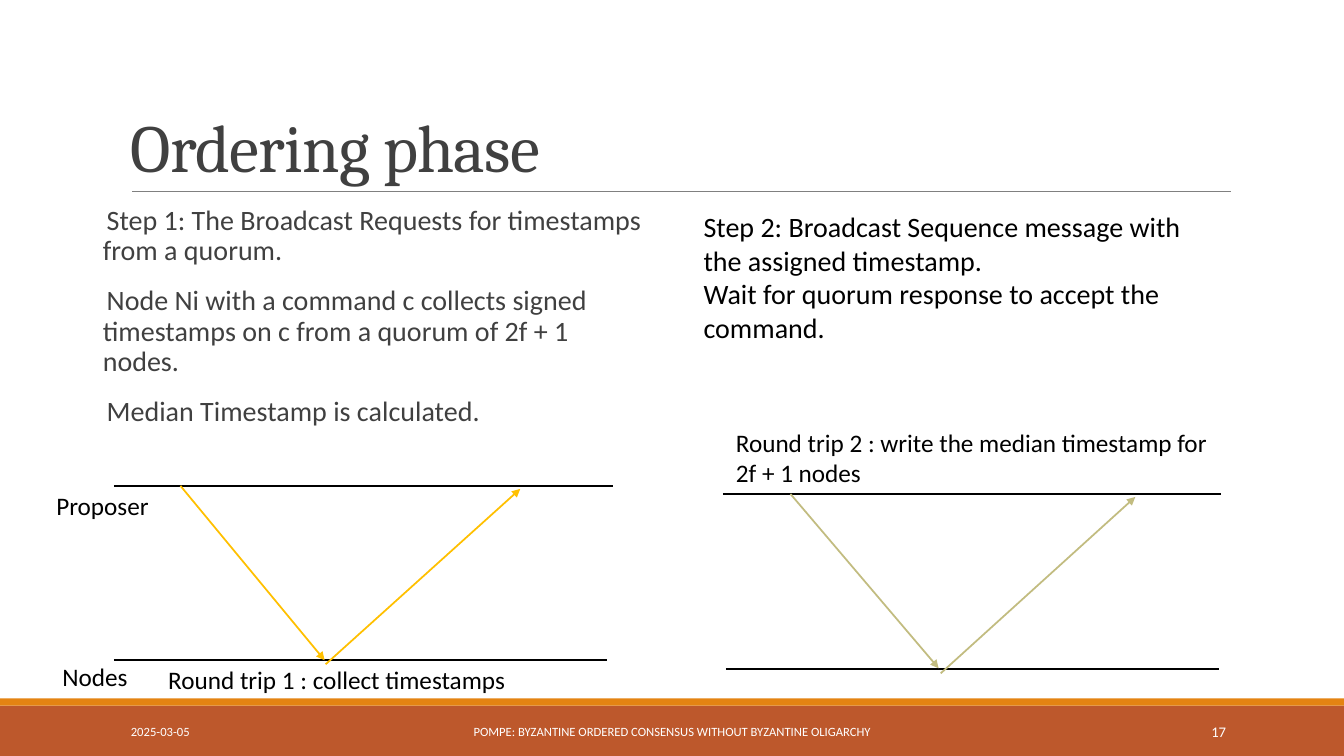
from lxml import etree
from pptx import Presentation
from pptx import util as u
from pptx.dml.color import RGBColor
from pptx.enum import dml, shapes, text
from pptx.oxml.ns import qn

HUES = {"rust": "BD582C", "amber": "E48312", "rule": "808080", "ink": "404040",
        "black": "000000", "white": "FFFFFF", "gold": "FFC000", "sand": "C2BC80"}

BARS = [(7, 0.5, "rust"), (6.93, 0.07, "amber")]

TITLE = {"size": 48, "font": "Cambria", "hue": "ink", "anchor": "BOTTOM", "lead": 0.85, "track": -50}
BODY = {"size": 20, "hue": "ink", "lead": 0.9, "before": 12, "after": 2, "side": 0, "bullet": True}
STEP = {"size": 20, "grow": True}
LABEL = {"size": 18, "grow": True}
FOOT = {"size": 9, "hue": "white", "anchor": "MIDDLE"}

TEXTS = [
    ((1.2, 0.31, 11, 1.59), TITLE, ["Ordering phase"]),
    ((0.92, 2, 5.44, 4.76), BODY, [
        "Step 1: The Broadcast Requests for timestamps from a quorum.",
        "Node Ni with a command c collects signed timestamps on c from a quorum of 2f + 1 nodes.",
        "Median Timestamp is calculated."]),
    ((6.88, 2.03, 5.23, 1.82), STEP, [
        "Step 2: Broadcast Sequence message with the assigned timestamp.",
        "Wait for quorum response to accept the command."]),
    ((7.2, 4.19, 4.89, 0.71), LABEL, ["Round trip 2 : write the median timestamp for 2f + 1 nodes"]),
    ((1.57, 6.54, 4.89, 0.4), LABEL, ["Round trip 1 : collect timestamps"]),
    ((0.52, 6.51, 1.52, 0.4), LABEL, ["Nodes"]),
    ((0.46, 4.82, 1.52, 0.4), LABEL, ["Proposer"]),
    ((1.2, 7.06, 2.7, 0.4), FOOT, ["2025-03-05"]),
    ((4.03, 7.06, 5.27, 0.4), {**FOOT, "align": "CENTER"},
     ["POMPE: BYZANTINE ORDERED CONSENSUS WITHOUT BYZANTINE OLIGARCHY"]),
    ((10.83, 7.06, 1.43, 0.4), {**FOOT, "size": 10.5, "align": "RIGHT"}, ["17"]),
]

RULE = (1.31, 1.9, 12.21, 1.9)
TRIPS = [
    {"hue": "gold", "rails": [(1.13, 4.82, 6.08, 4.82), (1.13, 6.55, 6.02, 6.55)],
     "arrows": [(1.79, 4.82, 3.22, 6.55), (3.23, 6.59, 5.16, 4.85)]},
    {"hue": "sand", "rails": [(7.17, 4.9, 12.11, 4.9), (7.2, 6.64, 12.09, 6.64)],
     "arrows": [(7.84, 4.9, 9.31, 6.63), (9.33, 6.68, 11.26, 4.93)]},
]


def color(name):
    return RGBColor.from_string(HUES[name])


def apply(item, values):
    for key, value in values.items():
        setattr(item, key, value)


def add_bar(slide, top, tall, hue):
    bar = slide.shapes.add_shape(shapes.MSO_SHAPE.RECTANGLE, 0, u.Inches(top),
                                 u.Inches(13.33), u.Inches(tall))
    bar.shadow.inherit = False
    bar.fill.solid()
    bar.fill.fore_color.rgb = color(hue)
    bar.line.fill.background()


def add_line(slide, ends, hue, width=1.25, arrow=False):
    line = slide.shapes.add_connector(shapes.MSO_CONNECTOR.STRAIGHT, *map(u.Inches, ends))
    line.line.color.rgb = color(hue)
    line.line.width = u.Pt(width)
    if arrow:
        tip = etree.SubElement(line.line._get_or_add_ln(), qn("a:tailEnd"))
        tip.set("type", "triangle")
    etree.SubElement(line._element.spPr, qn("a:effectLst"))


def add_bullet(para):
    props = para._p.get_or_add_pPr()
    props.set("marL", str(u.Inches(0.1)))
    props.set("indent", str(-u.Inches(0.1)))
    tint = etree.SubElement(props, qn("a:buClr"))
    etree.SubElement(tint, qn("a:srgbClr")).set("val", HUES["amber"])
    etree.SubElement(props, qn("a:buChar")).set("char", " ")


def add_text(slide, place, look, lines):
    frame = slide.shapes.add_textbox(*map(u.Inches, place)).text_frame
    side = u.Inches(look.get("side", 0.1))
    fit = text.MSO_AUTO_SIZE
    apply(frame, {
        "word_wrap": True, "margin_left": side, "margin_right": side,
        "auto_size": fit.SHAPE_TO_FIT_TEXT if look.get("grow") else fit.NONE,
        "vertical_anchor": text.MSO_ANCHOR[look.get("anchor", "TOP")]})
    for spot, words in enumerate(lines):
        para = frame.add_paragraph() if spot else frame.paragraphs[0]
        apply(para, {
            "alignment": text.PP_ALIGN[look.get("align", "LEFT")],
            "line_spacing": look.get("lead", 1.0),
            "space_before": u.Pt(look.get("before", 0)),
            "space_after": u.Pt(look.get("after", 0))})
        if look.get("bullet"):
            add_bullet(para)
        run = para.add_run()
        run.text = words
        apply(run.font, {"size": u.Pt(look["size"]), "name": look.get("font", "Calibri")})
        run.font.color.rgb = color(look.get("hue", "black"))
        if "track" in look:
            run._r.get_or_add_rPr().set("spc", str(look["track"]))


def main():
    deck = Presentation()
    apply(deck, {"slide_width": u.Inches(13.33), "slide_height": u.Inches(7.5)})
    slide = deck.slides.add_slide(deck.slide_layouts[6])
    for bar in BARS:
        add_bar(slide, *bar)
    add_line(slide, RULE, "rule", 0.5)
    for trip in TRIPS:
        for rail in trip["rails"]:
            add_line(slide, rail, "black")
        for ends in trip["arrows"]:
            add_line(slide, ends, trip["hue"], arrow=True)
    for block in TEXTS:
        add_text(slide, *block)
    deck.save("out.pptx")


if __name__ == "__main__":
    main()
